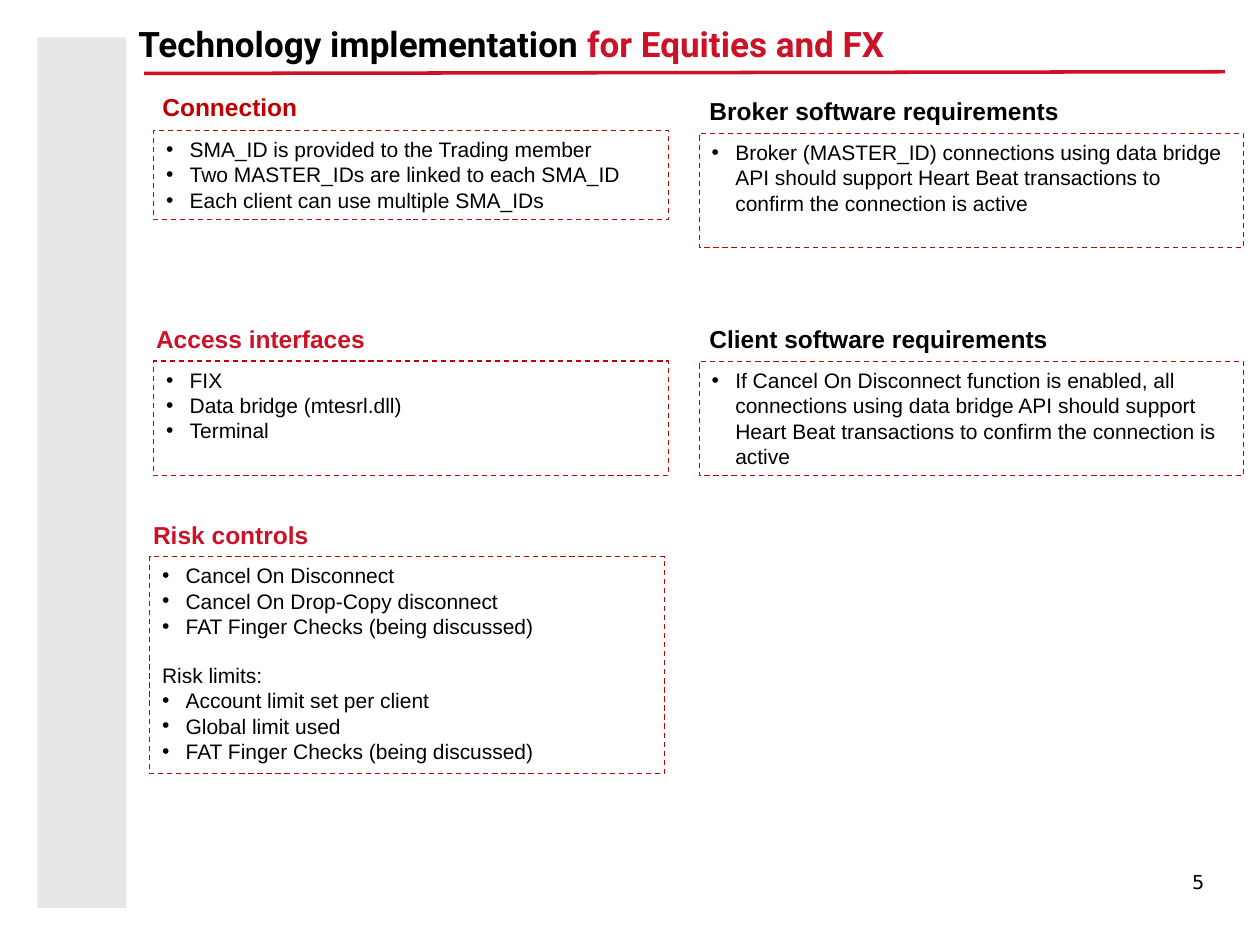
from dataclasses import dataclass
from typing import NamedTuple

from lxml import etree
from pptx import Presentation
from pptx.dml.color import RGBColor
from pptx.enum.dml import MSO_LINE
from pptx.enum.shapes import MSO_CONNECTOR, MSO_SHAPE
from pptx.enum.text import MSO_ANCHOR, MSO_AUTO_SIZE, PP_ALIGN
from pptx.oxml.ns import qn
from pptx.util import Pt

DASH = MSO_LINE.DASH
STRAIGHT = MSO_CONNECTOR.STRAIGHT
RECTANGLE = MSO_SHAPE.RECTANGLE
TOP = MSO_ANCHOR.TOP
FIT_SHAPE = MSO_AUTO_SIZE.SHAPE_TO_FIT_TEXT
LEFT, RIGHT = PP_ALIGN.LEFT, PP_ALIGN.RIGHT


@dataclass(frozen=True)
class Theme:
    """Colours, fonts and sizes of the slide."""
    black: str = "000000"
    red: str = "CD1126"
    dark_red: str = "C00000"
    rule: str = "CE1126"
    sidebar: str = "E6E6E6"
    title_font: str = "Roboto"
    body_font: str = "Arial"
    number_font: str = "DejaVu Sans"
    title_size: float = 20
    heading_size: float = 14
    body_size: float = 12
    number_size: float = 11
    heading_height: float = 24.5
    bullet_indent: float = 13.5
    group_gap: float = 13.8


THEME = Theme()


class Area(NamedTuple):
    """Position and size in points."""
    left: float
    top: float
    width: float
    height: float


class Item(NamedTuple):
    """One line of a panel."""
    text: str
    bulleted: bool = True


@dataclass(frozen=True)
class Panel:
    """A heading with a dashed box of items below it."""
    heading: str
    color: str
    heading_left: float
    heading_top: float
    heading_width: float
    area: Area
    items: tuple[Item, ...]


PANELS = (
    Panel("Connection", THEME.dark_red, 85.7, 49, 92.2, Area(87.8, 74.6, 294.2, 51),
          (Item("SMA_ID is provided to the Trading member"),
           Item("Two MASTER_IDs are linked to each SMA_ID"),
           Item("Each client can use multiple SMA_IDs"))),
    Panel("Access interfaces", THEME.red, 82.1, 181.5, 134.6, Area(87.8, 206.3, 294.2, 65.5),
          (Item("FIX"), Item("Data bridge (mtesrl.dll)"), Item("Terminal"))),
    Panel("Risk controls", THEME.red, 80.4, 293.8, 103.7, Area(85.5, 318.1, 294.2, 123.8),
          (Item("Cancel On Disconnect"), Item("Cancel On Drop-Copy disconnect"),
           Item("FAT Finger Checks (being discussed)"), Item("Risk limits:", False),
           Item("Account limit set per client"), Item("Global limit used"),
           Item("FAT Finger Checks (being discussed)"))),
    Panel("Broker software requirements", THEME.black, 398.3, 51.3, 215.3, Area(399.6, 76.3, 311, 65.3),
          (Item("Broker (MASTER_ID) connections using data bridge API should support "
                "Heart Beat transactions to confirm the connection is active"),)),
    Panel("Client software requirements", THEME.black, 398.3, 181.5, 208.8, Area(399.6, 206.6, 311, 65.3),
          (Item("If Cancel On Disconnect function is enabled, all connections using data bridge API "
                "should support Heart Beat transactions to confirm the connection is active"),)),
)


def add_span(para, text: str, font: str, size: float, color: str, bold: bool = False) -> None:
    """Append one formatted run to a paragraph."""
    span = para.add_run()
    span.text = text
    span.font.name = font
    span.font.size = Pt(size)
    span.font.bold = bold
    span.font.color.rgb = RGBColor.from_string(color)


def add_text_box(page, area: Area, wrap: bool = True):
    """Add a text box and return its frame."""
    frame = page.shapes.add_textbox(*map(Pt, area)).text_frame
    frame.word_wrap = wrap
    frame.vertical_anchor = TOP
    return frame


def add_rectangle(page, area: Area):
    """Add a rectangle without shadow."""
    box = page.shapes.add_shape(RECTANGLE, *map(Pt, area))
    box.shadow.inherit = False
    return box


def add_bullet(para) -> None:
    """Give a paragraph a hanging bullet."""
    properties = para._p.get_or_add_pPr()
    indent = Pt(THEME.bullet_indent)
    properties.set("marL", str(indent))
    properties.set("indent", str(-indent))
    etree.SubElement(properties, qn("a:buFont")).set("typeface", THEME.body_font)
    etree.SubElement(properties, qn("a:buChar")).set("char", "•")


def add_panel(page, panel: Panel) -> None:
    """Draw a heading and its dashed box."""
    heading_area = Area(panel.heading_left, panel.heading_top, panel.heading_width, THEME.heading_height)
    heading = add_text_box(page, heading_area, wrap=False)
    heading.auto_size = FIT_SHAPE
    add_span(heading.paragraphs[0], panel.heading, THEME.body_font, THEME.heading_size, panel.color, True)

    box = add_rectangle(page, panel.area)
    box.fill.background()
    box.line.color.rgb = RGBColor.from_string(THEME.dark_red)
    box.line.width = Pt(0.75)
    box.line.dash_style = DASH
    frame = box.text_frame
    frame.word_wrap = True
    frame.vertical_anchor = TOP
    for index, item in enumerate(panel.items):
        para = frame.add_paragraph() if index else frame.paragraphs[0]
        para.alignment = LEFT
        if item.bulleted:
            add_bullet(para)
        else:
            para.space_before = Pt(THEME.group_gap)
        add_span(para, item.text, THEME.body_font, THEME.body_size, THEME.black)


def add_sidebar(page) -> None:
    """Draw the grey band on the left."""
    band = add_rectangle(page, Area(21.3, 21.3, 51, 497.5))
    band.fill.solid()
    band.fill.fore_color.rgb = RGBColor.from_string(THEME.sidebar)
    band.line.fill.background()


def add_page_number(page) -> None:
    """Write the page number at the lower right."""
    frame = add_text_box(page, Area(660.2, 487.4, 28.1, 28.1))
    frame.margin_left = frame.margin_right = 0
    para = frame.paragraphs[0]
    para.alignment = RIGHT
    para.line_spacing = 1.5
    add_span(para, "5", THEME.number_font, THEME.number_size, THEME.black)


def add_title(page) -> None:
    """Write the two-coloured title."""
    para = add_text_box(page, Area(72, 9.4, 648, 48.2)).paragraphs[0]
    for text, color in (("Technology implementation ", THEME.black), ("for Equities and FX", THEME.red)):
        add_span(para, text, THEME.title_font, THEME.title_size, color, True)


def add_title_rule(page) -> None:
    """Draw the red rule under the title."""
    rule = page.shapes.add_connector(STRAIGHT, Pt(82.4), Pt(42), Pt(700), Pt(41))
    rule.line.color.rgb = RGBColor.from_string(THEME.rule)
    rule.line.width = Pt(2)
    etree.SubElement(rule._element.spPr, qn("a:effectLst"))


def main() -> None:
    """Build and save the slide."""
    deck = Presentation()
    deck.slide_width, deck.slide_height = Pt(720), Pt(540)
    page = deck.slides.add_slide(deck.slide_layouts[6])
    add_sidebar(page)
    add_page_number(page)
    add_title(page)
    for panel in PANELS:
        add_panel(page, panel)
    add_title_rule(page)
    deck.save("out.pptx")


if __name__ == "__main__":
    main()
